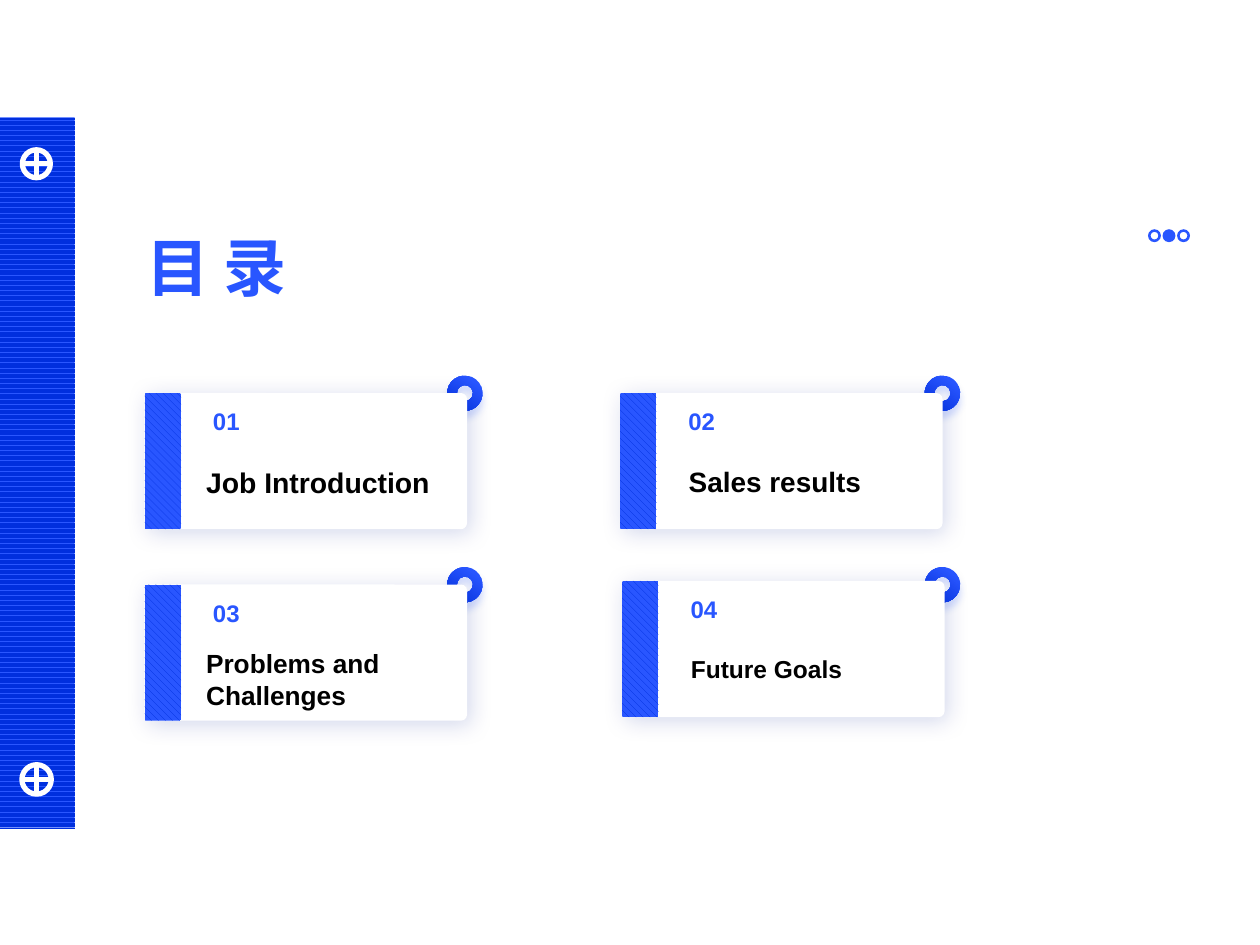
from dataclasses import dataclass

from lxml.etree import SubElement
from pptx import Presentation
from pptx.dml.color import RGBColor
from pptx.enum.dml import MSO_PATTERN as Pattern
from pptx.enum.shapes import MSO_SHAPE as Shape
from pptx.enum.text import MSO_ANCHOR, MSO_AUTO_SIZE, PP_ALIGN
from pptx.oxml import parse_xml
from pptx.oxml.ns import nsdecls, qn
from pptx.shapes.autoshape import Shape as AutoShape
from pptx.util import Pt


@dataclass(frozen=True)
class Theme:
    blue: str = "2956FF"
    deep: str = "002FDE"
    shade: str = "001F94"
    white: str = "FFFFFF"
    black: str = "000000"
    font: str = "Arial"
    title_size: float = 36
    number_size: float = 13.7


@dataclass(frozen=True)
class Box:
    left: float
    top: float
    width: float
    height: float

    def lengths(self) -> tuple:
        return Pt(self.left), Pt(self.top), Pt(self.width), Pt(self.height)


@dataclass(frozen=True)
class Shadow:
    color: str
    alpha: int
    blur: float
    distance: float
    angle: int


@dataclass(frozen=True)
class Card:
    number: str
    title: str
    left: float
    top: float
    title_dx: float
    title_dy: float
    title_width: float
    title_size: float


THEME = Theme()
CARD_W, CARD_H, TAB_W = 184.3, 77.8, 20.9
CARD_ROUND = 0.044
PIN_SIZE = 20.2
PIN_LEFTS, PIN_TOPS = (255.6, 528.5), (214.6, 324)
CARD_SHADOW = Shadow(THEME.shade, 17, 13, 3, 46)
PIN_SHADOW = Shadow(THEME.blue, 18, 4, 4, 90)
CARDS = (
    Card("01", "Job Introduction", 82.6, 224.6, 28.1, 37.4, 148.3, 16.2),
    Card("02", "Sales results", 354.3, 224.6, 32.2, 37.4, 148.3, 16),
    Card("03", "Problems and Challenges", 82.6, 334, 28.1, 32.4, 163.4, 15),
    Card("04", "Future Goals", 355.5, 332, 32.2, 38.1, 148.3, 14),
)


def rgb(color: str) -> RGBColor:
    return RGBColor.from_string(color)


def add_shape(shapes, kind: Shape, box: Box, fill: str | None = None,
              adj: float | None = None) -> AutoShape:
    s = shapes.add_shape(kind, *box.lengths())
    s.shadow.inherit = False
    s.line.fill.background()
    if fill:
        s.fill.solid()
        s.fill.fore_color.rgb = rgb(fill)
    if adj is not None:
        s.adjustments[0] = adj
    return s


def set_pattern(s: AutoShape, pattern: Pattern) -> None:
    s.fill.patterned()
    s.fill.pattern = pattern
    s.fill.fore_color.rgb = rgb(THEME.deep)
    s.fill.back_color.rgb = rgb(THEME.blue)


def set_shadow(s: AutoShape, shadow: Shadow) -> None:
    effects = s._element.spPr.find(qn("a:effectLst"))
    outer = SubElement(effects, qn("a:outerShdw"), blurRad=str(Pt(shadow.blur)),
                       dist=str(Pt(shadow.distance)), dir=str(shadow.angle * 60000),
                       algn="ctr", rotWithShape="0")
    color = SubElement(outer, qn("a:srgbClr"), val=shadow.color)
    SubElement(color, qn("a:alpha"), val=str(shadow.alpha * 1000))


def set_gradient(s: AutoShape, stops: tuple, angle: int) -> None:
    marks = "".join(f'<a:gs pos="{pos * 1000}"><a:srgbClr val="{color}"/></a:gs>'
                    for pos, color in stops)
    fill = parse_xml(f'<a:gradFill {nsdecls("a")} rotWithShape="1"><a:gsLst>{marks}'
                     f'</a:gsLst><a:lin ang="{angle * 60000}" scaled="0"/></a:gradFill>')
    s._element.spPr.find(qn("a:prstGeom")).addnext(fill)


def add_text(shapes, box: Box, text: str, size: float, color: str,
             spacing: float | None = None) -> None:
    tf = shapes.add_textbox(*box.lengths()).text_frame
    tf.word_wrap = True
    p = tf.paragraphs[0]
    p.text = text
    p.line_spacing = spacing
    set_font(p, size, color)


def set_font(p, size: float, color: str) -> None:
    p.font.name = THEME.font
    p.font.size = Pt(size)
    p.font.bold = True
    p.font.color.rgb = rgb(color)


def add_sidebar(shapes) -> None:
    bar = add_shape(shapes, Shape.RECTANGLE, Box(-0.5, 67, 43.2, 406))
    set_pattern(bar, Pattern.DARK_HORIZONTAL)
    for box in (Box(12.8, 85.6, 16, 16), Box(12.5, 437, 16.8, 16.8)):
        s = add_shape(shapes, Shape.FLOWCHART_OR, box)
        s.fill.background()
        s.line.color.rgb = rgb(THEME.white)
        s.line.width = Pt(3)


def add_dots(shapes) -> None:
    group = shapes.add_group_shape()
    for i, kind in enumerate((Shape.DONUT, Shape.OVAL, Shape.DONUT)):
        adj = 0.204 if kind == Shape.DONUT else None
        add_shape(group.shapes, kind, Box(656 + 8.3 * i, 131, 7.4, 7.4), THEME.blue, adj)


def add_pin(shapes, left: float, top: float) -> None:
    s = add_shape(shapes, Shape.DONUT, Box(left, top, PIN_SIZE, PIN_SIZE), adj=0.271)
    s.rotation = 324
    s._element.spPr.find(qn("a:xfrm")).set("flipH", "1")
    set_gradient(s, ((0, THEME.blue), (28, THEME.blue), (93, THEME.deep)), 19)
    set_shadow(s, PIN_SHADOW)


def add_card(shapes, card: Card) -> None:
    body = add_shape(shapes, Shape.ROUNDED_RECTANGLE,
                     Box(card.left, card.top, CARD_W, CARD_H), THEME.white, CARD_ROUND)
    set_shadow(body, CARD_SHADOW)
    tab = add_shape(shapes, Shape.ROUNDED_RECTANGLE,
                    Box(card.left, card.top, TAB_W, CARD_H), adj=CARD_ROUND)
    set_pattern(tab, Pattern.WIDE_DOWNWARD_DIAGONAL)
    add_text(shapes, Box(card.left + 32, card.top + 7.4, 35.3, 24.5),
             card.number, THEME.number_size, THEME.blue, 0.8)
    add_text(shapes, Box(card.left + card.title_dx, card.top + card.title_dy,
                         card.title_width, 36),
             card.title, card.title_size, THEME.black)


def set_title(title, text: str) -> None:
    title.left, title.top, title.width, title.height = Box(76.3, 126.7, 110.9, 56.9).lengths()
    tf = title.text_frame
    tf.auto_size = MSO_AUTO_SIZE.NONE
    tf.vertical_anchor = MSO_ANCHOR.TOP
    p = tf.paragraphs[0]
    p.text = text
    p.alignment = PP_ALIGN.JUSTIFY
    set_font(p, THEME.title_size, THEME.blue)


def main() -> None:
    prs = Presentation()
    prs.slide_width, prs.slide_height = Pt(720), Pt(540)
    slide = prs.slides.add_slide(prs.slide_layouts[5])
    shapes = slide.shapes
    set_title(shapes.title, "目 录")
    add_sidebar(shapes)
    add_dots(shapes)
    for top in PIN_TOPS:
        for left in PIN_LEFTS:
            add_pin(shapes, left, top)
    for card in CARDS:
        add_card(shapes, card)
    prs.save("out.pptx")


if __name__ == "__main__":
    main()
